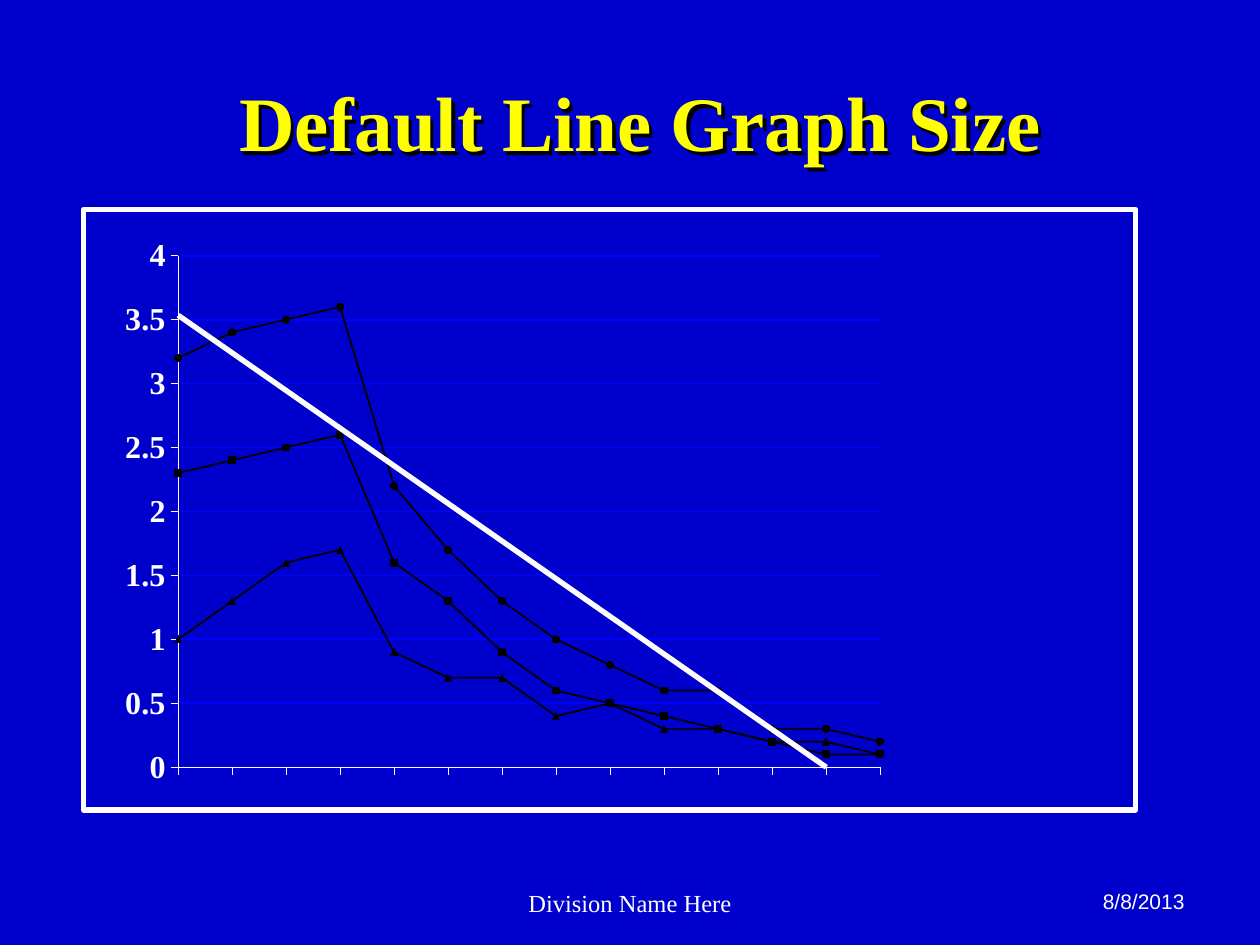
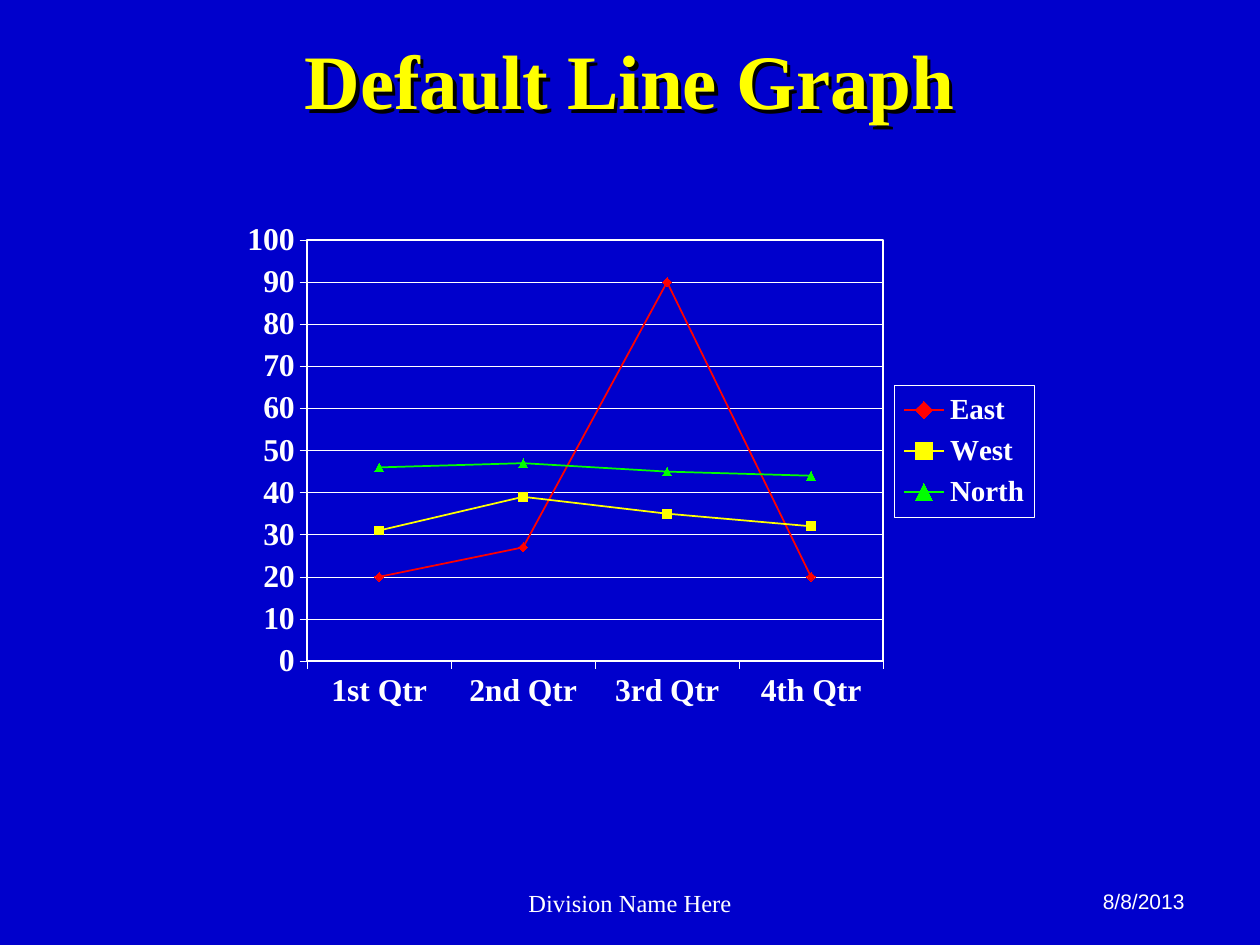
from pptx import Presentation, util as u
from pptx.chart import data
from pptx.dml import color
from pptx.enum import chart as kinds, text
from pptx.oxml import ns, parse_xml

BLUE, WHITE, YELLOW, BLACK = "0000CC", "FFFFFF", "FFFF00", "000000"
RED, GREEN, GRID_BLUE = "FF0000", "00FF00", "0000FF"
SERIF, SANS = "Times New Roman", "Arial"
WIDTH, HEIGHT = u.Inches(10), u.Inches(7.5)
COLUMN, ROW = WIDTH // 120, HEIGHT // 90
NAMES = ns.nsdecls("c", "a")
OUTLINE = '<a:ln w="{}"><a:solidFill><a:srgbClr val="' + WHITE + '"/></a:solidFill></a:ln>'
BORDER = f"<c:spPr {NAMES}><a:noFill/>{OUTLINE}</c:spPr>"
NO_BORDER = f"<c:spPr {NAMES}><a:noFill/><a:ln><a:noFill/></a:ln></c:spPr>"
SHADOW = f"""<a:effectLst {NAMES}><a:outerShdw dist="{u.Pt(2.8)}" dir="2700000">
<a:srgbClr val="{BLACK}"/></a:outerShdw></a:effectLst>"""
TREND = f"""<c:trendline {NAMES}><c:spPr>{OUTLINE.format(u.Pt(3.07))}</c:spPr>
<c:trendlineType val="linear"/><c:dispRSqr val="0"/><c:dispEq val="0"/></c:trendline>"""


def hue(code):
    return color.RGBColor.from_string(code)


def write(page, words, place, size=14, font=SERIF, ink=WHITE, bold=False,
          align="CENTER", anchor="TOP", shadow=False):
    box = page.shapes.add_textbox(*place)
    frame = box.text_frame
    frame.word_wrap = True
    frame.vertical_anchor = text.MSO_ANCHOR[anchor]
    para = frame.paragraphs[0]
    para.alignment = text.PP_ALIGN[align]
    span = para.add_run()
    span.text = words
    span.font.name, span.font.size, span.font.bold = font, u.Pt(size), bold
    span.font.color.rgb = hue(ink)
    if shadow:
        box.element.spPr.append(parse_xml(SHADOW))


slides = [
    dict(title="Default Line Graph Size", title_at=(10, 4),
         chart_at=(7.7, 19.7, 100.7, 57.7), plot=(0.09, 0.077, 0.667, 0.852),
         size=18.4, top=4, step=0.5, grid=(GRID_BLUE, 1.02), marker_size=4,
         categories=[""] * 14, framed=True,
         series=[
             ("", BLACK, "CIRCLE",
              [3.2, 3.4, 3.5, 3.6, 2.2, 1.7, 1.3, 1, 0.8, 0.6, 0.6, 0.3, 0.3, 0.2]),
             ("", BLACK, "SQUARE",
              [2.3, 2.4, 2.5, 2.6, 1.6, 1.3, 0.9, 0.6, 0.5, 0.4, 0.3, 0.2, 0.1, 0.1]),
             ("", BLACK, "TRIANGLE",
              [1, 1.3, 1.6, 1.7, 0.9, 0.7, 0.7, 0.4, 0.5, 0.3, 0.3, 0.2, 0.2, 0.1])]),
    dict(title="Default Line Graph", title_at=(9, 0),
         chart_at=(20.6, 19, 78.7, 52.1), plot=(0.11, 0.074, 0.697, 0.77),
         size=18.1, top=100, step=10, grid=(WHITE, 0.25), marker_size=5,
         categories=["1st Qtr", "2nd Qtr", "3rd Qtr", "4th Qtr"], framed=False,
         legend=(0.82, 0.34, 0.17, 0.24),
         series=[
             ("East", RED, "DIAMOND", [20, 27, 90, 20]),
             ("West", YELLOW, "SQUARE", [31, 39, 35, 32]),
             ("North", GREEN, "TRIANGLE", [46, 47, 45, 44])]),
]

deck = Presentation()
deck.slide_width, deck.slide_height = WIDTH, HEIGHT

for slide in slides:
    page = deck.slides.add_slide(deck.slide_layouts[6])
    page.background.fill.solid()
    page.background.fill.fore_color.rgb = hue(BLUE)
    write(page, "8/8/2013", (89 * COLUMN, 84 * ROW, 25 * COLUMN, 6 * ROW),
          size=12, font=SANS, align="RIGHT")
    write(page, "Division Name Here", (41 * COLUMN, 84 * ROW, 38 * COLUMN, 6 * ROW))
    left, top = slide["title_at"]
    write(page, slide["title"], (left * COLUMN, top * ROW, 102 * COLUMN, 15 * ROW),
          size=44, ink=YELLOW, bold=True, anchor="MIDDLE", shadow=True)

    numbers = data.CategoryChartData()
    numbers.categories = slide["categories"]
    for name, ink, symbol, values in slide["series"]:
        numbers.add_series(name, values)
    left, top, width, height = slide["chart_at"]
    chart = page.shapes.add_chart(
        kinds.XL_CHART_TYPE.LINE_MARKERS, int(left * COLUMN), int(top * ROW),
        int(width * COLUMN), int(height * ROW), numbers).chart
    chart.has_title = False
    chart.has_legend = not slide["framed"]
    chart.plots[0].vary_by_categories = False

    fonts = [(chart.font, slide["size"])]
    for axis in (chart.category_axis, chart.value_axis):
        axis.major_tick_mark = kinds.XL_TICK_MARK.OUTSIDE
        axis.minor_tick_mark = kinds.XL_TICK_MARK.NONE
        axis.format.line.color.rgb = hue(WHITE)
        axis.format.line.width = u.Pt(0.25)
        fonts.append((axis.tick_labels.font, slide["size"]))
    scale = chart.value_axis
    scale.minimum_scale, scale.maximum_scale = 0, slide["top"]
    scale.major_unit = slide["step"]
    scale.tick_labels.number_format = "General"
    scale.tick_labels.number_format_is_linked = False
    scale.has_major_gridlines = True
    grid_ink, grid_width = slide["grid"]
    scale.major_gridlines.format.line.color.rgb = hue(grid_ink)
    scale.major_gridlines.format.line.width = u.Pt(grid_width)
    if chart.has_legend:
        chart.legend.position = kinds.XL_LEGEND_POSITION.RIGHT
        chart.legend.include_in_layout = False
        fonts.append((chart.legend.font, 16.6))
    for font, size in fonts:
        font.name, font.size, font.bold = SERIF, u.Pt(size), True
        font.color.rgb = hue(WHITE)

    for series, (name, ink, symbol, values) in zip(chart.plots[0].series, slide["series"]):
        series.smooth = False
        series.format.line.color.rgb = hue(ink)
        series.format.line.width = u.Pt(1)
        marker = series.marker
        marker.style = kinds.XL_MARKER_STYLE[symbol]
        marker.size = slide["marker_size"]
        marker.format.fill.solid()
        marker.format.fill.fore_color.rgb = hue(ink)
        marker.format.line.color.rgb = hue(ink)

    body = chart.element.find(ns.qn("c:chart"))
    plot, legend = body.find(ns.qn("c:plotArea")), body.find(ns.qn("c:legend"))
    areas = [(plot, 0, '<c:layoutTarget val="inner"/>', slide["plot"])]
    if chart.has_legend:
        areas.append((legend, 1, "", slide["legend"]))
    for area, index, target, shares in areas:
        for layout in area.findall(ns.qn("c:layout")):
            area.remove(layout)
        lengths = "".join(f'<c:{key} val="{share}"/>' for key, share in zip("xywh", shares))
        area.insert(index, parse_xml(
            f'<c:layout {NAMES}><c:manualLayout>{target}<c:xMode val="edge"/>'
            f'<c:yMode val="edge"/>{lengths}</c:manualLayout></c:layout>'))

    if slide["framed"]:
        chart.category_axis.tick_label_position = kinds.XL_TICK_LABEL_POSITION.NONE
        value_axis = plot.find(ns.qn("c:valAx"))
        for crossing in value_axis.findall(ns.qn("c:crossBetween")):
            value_axis.remove(crossing)
        value_axis.find(ns.qn("c:crosses")).addnext(
            parse_xml(f'<c:crossBetween {NAMES} val="midCat"/>'))
        first = plot.find(f'.//{ns.qn("c:ser")}')
        first.find(ns.qn("c:cat")).addprevious(parse_xml(TREND))
        plot.append(parse_xml(NO_BORDER))
        body.addnext(parse_xml(BORDER.format(u.Pt(3.07))))
    else:
        plot.append(parse_xml(BORDER.format(u.Pt(1))))
        body.addnext(parse_xml(NO_BORDER))
        legend.find(ns.qn("c:txPr")).addprevious(parse_xml(BORDER.format(u.Pt(0.25))))

deck.save("out.pptx")
